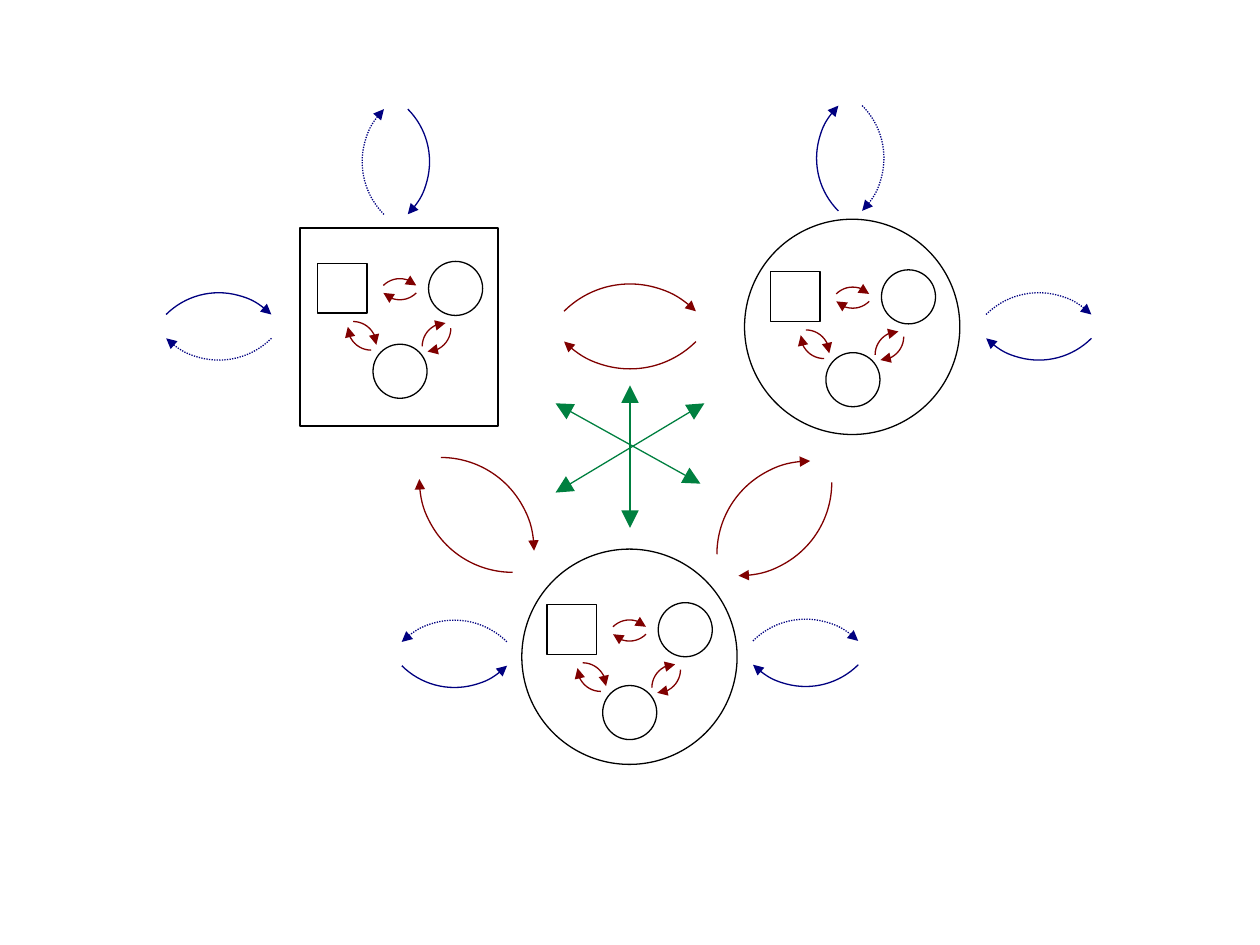
import lxml.etree
import pptx
import pptx.dml.color
import pptx.enum.dml
import pptx.enum.shapes
import pptx.oxml.ns
import pptx.util
from pptx.util import Cm

BLACK, NAVY, MAROON, GREEN = "000000", "000080", "800000", "008040"
RECTANGLE = pptx.enum.shapes.MSO_SHAPE.RECTANGLE
OVAL = pptx.enum.shapes.MSO_SHAPE.OVAL
DOTTED = pptx.enum.dml.MSO_LINE.ROUND_DOT
qn = pptx.oxml.ns.qn


def color(hex_string):
    return pptx.dml.color.RGBColor.from_string(hex_string)


def style_line(shape, hex_string, dash=None):
    shape.line.color.rgb = color(hex_string)
    shape.line.width = pptx.util.Pt(0.75)
    if dash is not None:
        shape.line.dash_style = dash


def add_arrowheads(shape, ends, size="med"):
    line = shape.element.find(".//" + qn("a:ln"))
    for end in ends:
        lxml.etree.SubElement(line, qn("a:" + end), type="triangle", w=size, len=size)


def add_outline(shapes, kind, left, top, size):
    shape = shapes.add_shape(kind, Cm(left), Cm(top), Cm(size), Cm(size))
    shape.shadow.inherit = False
    shape.fill.background()
    style_line(shape, BLACK)


def add_arc(shapes, center_x, center_y, size, rotation, hex_string, dash, end):
    """Quarter circle that bulges to the upper right before it is rotated."""
    builder = shapes.build_freeform(0, 0)
    builder.add_line_segments([(Cm(size), Cm(size))], close=False)
    arc = builder.convert_to_shape(Cm(center_x - size / 2), Cm(center_y - size / 2))
    arc.rotation = rotation
    arc.shadow.inherit = False
    arc.fill.background()
    style_line(arc, hex_string, dash)
    add_arrowheads(arc, [end])

    # Bend the straight segment into a quarter circle
    path = arc.element.find(".//" + qn("a:path"))
    path.set("fill", "none")
    path.remove(path.find(qn("a:lnTo")))
    radius = str(Cm(size))
    lxml.etree.SubElement(path, qn("a:arcTo"), wR=radius, hR=radius,
                          stAng="16200000", swAng="5400000")


def add_arc_pair(shapes, center_x, center_y, size, gap, rotation, hex_string,
                 dashes=(None, None), end="tailEnd"):
    """Two opposite arcs, pushed apart along the direction they bulge in."""
    # Unit vectors of the bulge for each rotation in use
    half = 0.71
    direction_x, direction_y = {0: (half, -half), 45: (1, 0),
                                90: (half, half), 315: (0, -1)}[rotation]
    for side, dash in zip((1, -1), dashes):
        add_arc(shapes,
                center_x + side * direction_x * gap / 2,
                center_y + side * direction_y * gap / 2,
                size, (rotation + (0 if side == 1 else 180)) % 360,
                hex_string, dash, end)


def add_cluster(slide, left, top):
    """Small square and two circles that exchange arrows."""
    shapes = slide.shapes.add_group_shape().shapes
    add_outline(shapes, RECTANGLE, left, top, 1)
    add_outline(shapes, OVAL, left + 2.24, top - 0.04, 1.09)
    add_outline(shapes, OVAL, left + 1.12, top + 1.63, 1.09)
    for x, y, rotation in [(0.9, 1.46, 0), (2.4, 1.49, 90), (1.66, 0.52, 315)]:
        add_arc_pair(shapes, left + x, top + y, 0.47, 0.15, rotation, MAROON)


def add_double_arrow(slide, start_x, start_y, end_x, end_y):
    connector = slide.shapes.add_connector(
        pptx.enum.shapes.MSO_CONNECTOR.STRAIGHT,
        Cm(start_x), Cm(start_y), Cm(end_x), Cm(end_y))
    style_line(connector, GREEN)
    add_arrowheads(connector, ["headEnd", "tailEnd"], "lg")
    lxml.etree.SubElement(connector.element.spPr, qn("a:effectLst"))


def main():
    presentation = pptx.Presentation()
    presentation.slide_width = Cm(25.4)
    presentation.slide_height = Cm(19.05)
    slide = presentation.slides.add_slide(presentation.slide_layouts[6])

    # Three large systems
    add_outline(slide.shapes, RECTANGLE, 6.05, 4.6, 3.99)
    add_outline(slide.shapes, OVAL, 15.01, 4.42, 4.34)
    add_outline(slide.shapes, OVAL, 10.52, 11.07, 4.34)

    # Exchange with the surroundings
    solid_first, dotted_first = (None, DOTTED), (DOTTED, None)
    for x, y, rotation, dashes, end in [
        (4.41, 6.58, 315, solid_first, "tailEnd"),
        (9.16, 13.18, 315, dotted_first, "headEnd"),
        (16.24, 13.16, 315, dotted_first, "tailEnd"),
        (20.94, 6.58, 315, dotted_first, "tailEnd"),
        (7.98, 3.26, 45, solid_first, "tailEnd"),
        (17.14, 3.19, 45, dotted_first, "tailEnd"),
    ]:
        add_arc_pair(slide.shapes, x, y, 1.5, 0.48, rotation, NAVY, dashes, end)

    # Central double arrows
    add_double_arrow(slide, 12.7, 7.77, 12.7, 10.64)
    add_double_arrow(slide, 11.2, 8.13, 14.12, 9.75)
    add_double_arrow(slide, 14.2, 8.13, 11.2, 9.93)

    # Exchange between the systems
    for x, y, rotation in [(9.61, 10.38, 0), (15.61, 10.45, 90), (12.7, 6.58, 315)]:
        add_arc_pair(slide.shapes, x, y, 1.88, 0.61, rotation, MAROON)

    # Parts inside each system
    for left, top in [(6.4, 5.31), (15.53, 5.48), (11.03, 12.19)]:
        add_cluster(slide, left, top)

    presentation.save("out.pptx")


if __name__ == "__main__":
    main()
